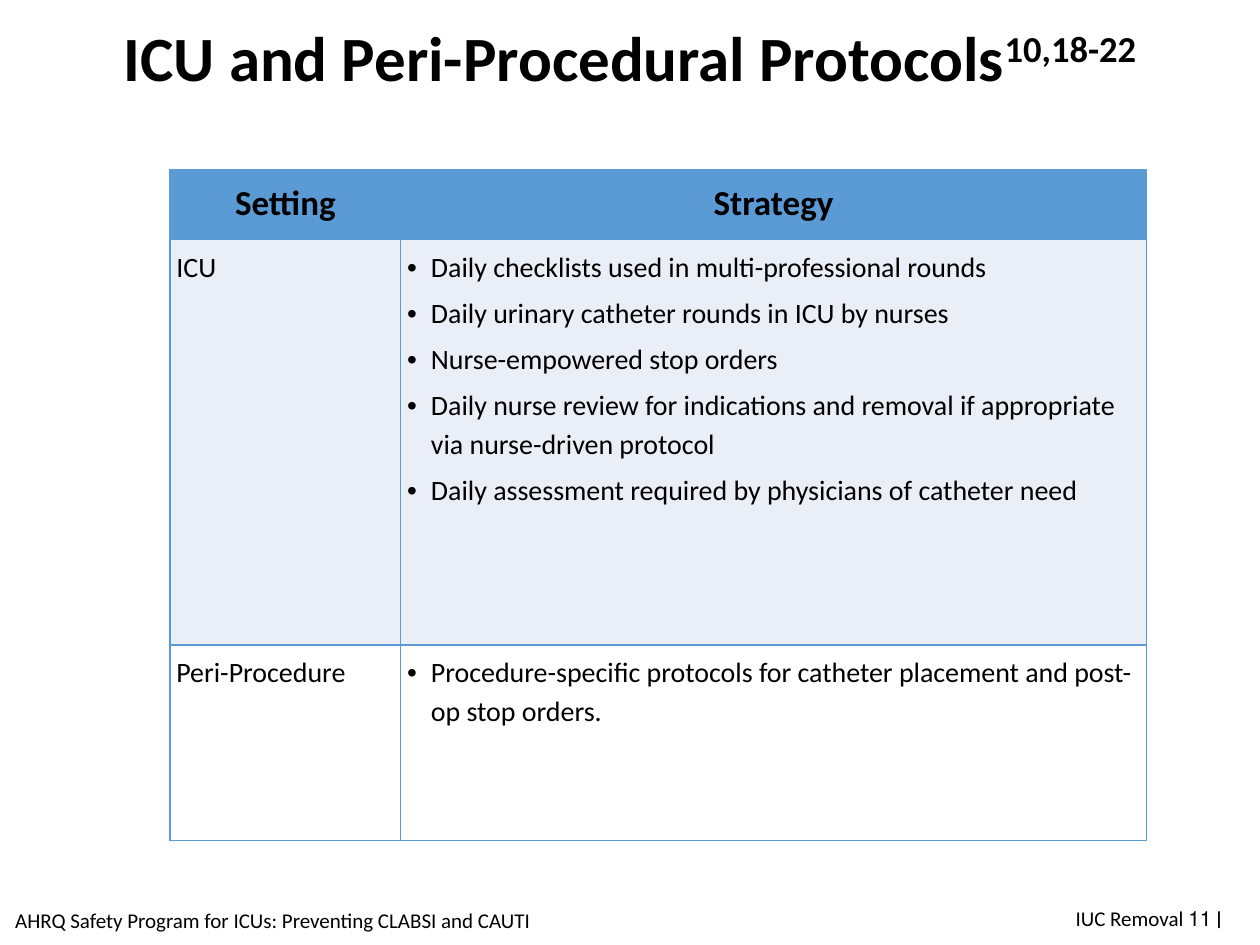
"""Build the slide on ICU and peri-procedural catheter protocols."""
from lxml.etree import SubElement
from pptx import Presentation
from pptx.dml.color import RGBColor
from pptx.enum.text import MSO_ANCHOR as Anchor, PP_ALIGN as Align
from pptx.oxml.ns import qn
from pptx.util import Pt

TITLE = ("ICU and Peri-Procedural Protocols", "10,18-22")
FEET = [
    ("AHRQ Safety Program for ICUs: Preventing CLABSI and CAUTI", (0, 511, 312, 29), Align.CENTER),
    ("IUC Removal ׀ 11", (543, 510, 162, 29), Align.RIGHT),
]
HEAD = ("Setting", "Strategy")
BODY = [
    ("ICU", [
        "Daily checklists used in multi-professional rounds",
        "Daily urinary catheter rounds in ICU by nurses",
        "Nurse-empowered stop orders",
        "Daily nurse review for indications and removal if appropriate via nurse-driven protocol",
        "Daily assessment required by physicians of catheter need",
    ]),
    ("Peri-Procedure", [
        "Procedure-specific protocols for catheter placement and post-op stop orders.",
    ]),
]
COLS = (131.8, 426.2)
ROWS = (39.6, 231.8, 111.6)
LEFT, TOP = 97.2, 97.2
BLUE, PALE, WHITE, BLACK = "5B9BD5", "EAEFF7", "FFFFFF", "000000"


def color(code):
    return RGBColor.from_string(code)


def add_run(para, text, size, bold=False):
    run = para.add_run()
    run.text = text
    font = run.font
    font.name, font.size, font.bold = "Calibri", Pt(size), bold
    font.color.rgb = color(BLACK)
    return run


def add_box(slide, spot, align):
    frame = slide.shapes.add_textbox(*map(Pt, spot)).text_frame
    frame.word_wrap = True
    frame.vertical_anchor = Anchor.MIDDLE
    para = frame.paragraphs[0]
    para.alignment = align
    return para


def add_bullet(para):
    props = para._p.get_or_add_pPr()
    props.set("marL", str(Pt(13.7)))
    props.set("indent", str(-Pt(13.7)))
    SubElement(props, qn("a:buFont"), typeface="Arial")
    SubElement(props, qn("a:buChar"), char="•")


def style_cell(cell, fill):
    props = cell._tc.get_or_add_tcPr()
    for side in ("lnL", "lnR", "lnT", "lnB"):
        line = SubElement(props, qn(f"a:{side}"), w=str(Pt(1)))
        solid = SubElement(line, qn("a:solidFill"))
        SubElement(solid, qn("a:srgbClr"), val=BLUE)
    cell.fill.solid()
    cell.fill.fore_color.rgb = color(fill)


def fill_cell(cell, lines, fill, size=16, head=False, dots=False):
    style_cell(cell, fill)
    if not head:
        cell.margin_left = cell.margin_right = Pt(3.6)
    cell.margin_top = cell.margin_bottom = Pt(3.6)
    frame = cell.text_frame
    for i, text in enumerate(lines):
        para = frame.add_paragraph() if i else frame.paragraphs[0]
        if dots:
            add_bullet(para)
        para.alignment = Align.CENTER if head else Align.LEFT
        para.line_spacing = 1.14
        para.space_before = Pt(1 if i else 0)
        para.space_after = Pt(3)
        add_run(para, text, size, head)


def add_grid(slide):
    spot = (LEFT, TOP, sum(COLS), sum(ROWS))
    table = slide.shapes.add_table(len(ROWS), len(COLS), *map(Pt, spot)).table
    for col, width in zip(table.columns, COLS):
        col.width = Pt(width)
    for row, height in zip(table.rows, ROWS):
        row.height = Pt(height)
    for c, name in enumerate(HEAD):
        fill_cell(table.cell(0, c), [name], BLUE, 20, head=True)
    for r, (name, steps) in enumerate(BODY, 1):
        fill = PALE if r % 2 else WHITE
        fill_cell(table.cell(r, 0), [name], fill)
        fill_cell(table.cell(r, 1), steps, fill, dots=True)


def main():
    deck = Presentation()
    deck.slide_width, deck.slide_height = Pt(720), Pt(540)
    slide = deck.slides.add_slide(deck.slide_layouts[6])
    para = add_box(slide, (49.7, 3.6, 620.6, 64), Align.CENTER)
    para.line_spacing = 0.85
    name, notes = TITLE
    add_run(para, name, 36, True)
    add_run(para, notes, 36, True).font._element.set("baseline", "30000")
    add_grid(slide)
    for text, spot, align in FEET:
        add_run(add_box(slide, spot, align), text, 12)
    deck.save("out.pptx")


if __name__ == "__main__":
    main()
